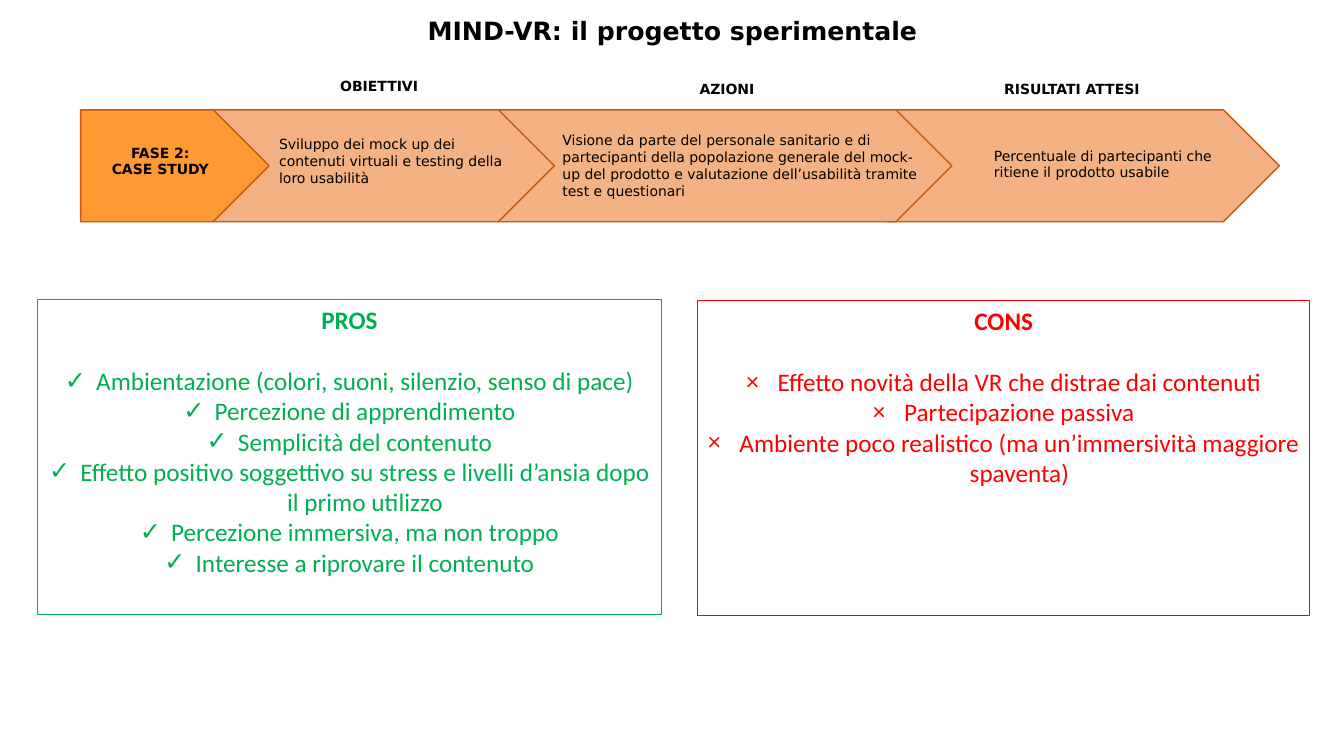
from dataclasses import dataclass
from typing import NamedTuple

from lxml import etree
from pptx import Presentation, util as u
from pptx.dml.color import RGBColor
from pptx.enum import shapes, text
from pptx.oxml.ns import qn


@dataclass(frozen=True)
class Theme:
    ink: str = "000000"
    phase: str = "FF9933"
    step: str = "F4B183"
    outline: str = "C55A11"
    pros: str = "00B050"
    cons: str = "FF0000"
    label_font: str = "DejaVu Sans"
    list_font: str = "Calibri"
    large: int = 18
    small: int = 10


class Box(NamedTuple):
    """Left, top, width and height as percentages of the slide."""
    left: float
    top: float
    width: float
    height: float


@dataclass(frozen=True)
class Step:
    left: float
    width: float
    fill: str
    words: list[str]
    words_box: Box
    heading: str = ""
    heading_box: Box | None = None


@dataclass(frozen=True)
class Verdict:
    heading: str
    box: Box
    color: str
    mark: str
    points: list[str]


THEME = Theme()
WIDTH, HEIGHT = u.Inches(13.33), u.Inches(7.5)
ARROW_TOP, ARROW_HEIGHT = 14.53, 14.8
BULLET_INDENT = u.Inches(0.31)
HEADING_GAP = u.Pt(22)
TITLE_BOX = Box(3.6, 1.33, 92.87, 5.33)

STEPS = [
    Step(6, 14.03, THEME.phase, ["FASE 2:", "CASE STUDY"], Box(7.05, 18.4, 9.75, 5.87)),
    Step(15.9, 25.36, THEME.step,
         ["Sviluppo dei mock up dei contenuti virtuali e testing della loro usabilità"],
         Box(20.03, 17.33, 19.65, 8.13), "OBIETTIVI", Box(23.33, 9.6, 9.75, 3.6)),
    Step(37.06, 33.76, THEME.step,
         ["Visione da parte del personale sanitario e di partecipanti della popolazione "
          "generale del mock-up del prodotto e valutazione dell’usabilità tramite test "
          "e questionari"],
         Box(41.11, 16.8, 28.28, 10.27), "AZIONI", Box(49.21, 10, 9.75, 3.6)),
    Step(66.02, 29.18, THEME.step,
         ["Percentuale di partecipanti che ritiene il prodotto usabile"],
         Box(73.22, 18.8, 19.5, 5.87), "RISULTATI ATTESI", Box(72.02, 10, 15.45, 3.6)),
]

VERDICTS = [
    Verdict("PROS", Box(2.78, 39.6, 46.44, 41.73), THEME.pros, "✓", [
        "Ambientazione (colori, suoni, silenzio, senso di pace)",
        "Percezione di apprendimento",
        "Semplicità del contenuto",
        "Effetto positivo soggettivo su stress e livelli d’ansia dopo il primo utilizzo",
        "Percezione immersiva, ma non troppo",
        "Interesse a riprovare il contenuto",
    ]),
    Verdict("CONS", Box(51.91, 39.73, 45.54, 41.73), THEME.cons, "×", [
        "Effetto novità della VR che distrae dai contenuti",
        "Partecipazione passiva",
        "Ambiente poco realistico (ma un’immersività maggiore spaventa)",
    ]),
]


def emu(box: Box) -> tuple[int, int, int, int]:
    """Turn percentages of the slide into slide units."""
    return (round(box.left * WIDTH / 100), round(box.top * HEIGHT / 100),
            round(box.width * WIDTH / 100), round(box.height * HEIGHT / 100))


def place(holder, box: Box) -> None:
    holder.left, holder.top, holder.width, holder.height = emu(box)


def write(frame, lines: list[str], *, size: int = THEME.small, font: str = THEME.label_font,
          color: str = THEME.ink, bold: bool = False, centered: bool = True) -> None:
    frame.word_wrap = True
    frame.auto_size = text.MSO_AUTO_SIZE.NONE
    frame.vertical_anchor = text.MSO_ANCHOR.TOP
    frame.text = "\n".join(lines)
    for line in frame.paragraphs:
        line.alignment = text.PP_ALIGN.CENTER if centered else text.PP_ALIGN.LEFT
        line.space_before = line.space_after = u.Pt(0)
        line.line_spacing = 1.0
        face = line.runs[0].font
        face.size, face.name, face.bold = u.Pt(size), font, bold
        face.color.rgb = RGBColor.from_string(color)


def set_bullet(line, mark: str, color: str) -> None:
    """Give the paragraph a hanging bullet, or none when mark is empty."""
    props = line._p.get_or_add_pPr()
    indent = BULLET_INDENT if mark else 0
    props.set("marL", str(indent))
    props.set("indent", str(-indent))
    if not mark:
        etree.SubElement(props, qn("a:buNone"))
        return
    tint = etree.SubElement(props, qn("a:buClr"))
    etree.SubElement(tint, qn("a:srgbClr"), val=color)
    etree.SubElement(props, qn("a:buFont"), typeface=THEME.list_font)
    etree.SubElement(props, qn("a:buChar"), char=mark)


def draw_arrow(slide, step: Step) -> None:
    box = Box(step.left, ARROW_TOP, step.width, ARROW_HEIGHT)
    arrow = slide.shapes.add_shape(shapes.MSO_SHAPE.PENTAGON, *emu(box))
    arrow.shadow.inherit = False
    arrow.fill.solid()
    arrow.fill.fore_color.rgb = RGBColor.from_string(step.fill)
    arrow.line.color.rgb = RGBColor.from_string(THEME.outline)
    arrow.line.width = u.Pt(1)


def draw_label(slide, lines: list[str], box: Box, **style) -> None:
    write(slide.shapes.add_textbox(*emu(box)).text_frame, lines, **style)


def fill_verdict(body, verdict: Verdict) -> None:
    place(body, verdict.box)
    body.line.color.rgb = RGBColor.from_string(verdict.color)
    body.line.width = u.Pt(0.75)
    write(body.text_frame, [verdict.heading, *verdict.points], size=THEME.large,
          font=THEME.list_font, color=verdict.color)
    heading, *points = body.text_frame.paragraphs
    heading.runs[0].font.bold = True
    heading.space_after = HEADING_GAP
    set_bullet(heading, "", verdict.color)
    for point in points:
        set_bullet(point, verdict.mark, verdict.color)


def main() -> None:
    deck = Presentation()
    deck.slide_width, deck.slide_height = WIDTH, HEIGHT
    slide = deck.slides.add_slide(deck.slide_layouts.get_by_name("Two Content"))

    title, *bodies = slide.placeholders
    place(title, TITLE_BOX)
    write(title.text_frame, ["MIND-VR: il progetto sperimentale"], size=THEME.large, bold=True)

    for step in reversed(STEPS):
        draw_arrow(slide, step)
    for step in STEPS:
        is_phase = not step.heading
        draw_label(slide, step.words, step.words_box, bold=is_phase, centered=is_phase)
        if step.heading_box:
            draw_label(slide, [step.heading], step.heading_box, bold=True)

    for body, verdict in zip(bodies, VERDICTS):
        fill_verdict(body, verdict)

    deck.save("out.pptx")


if __name__ == "__main__":
    main()
